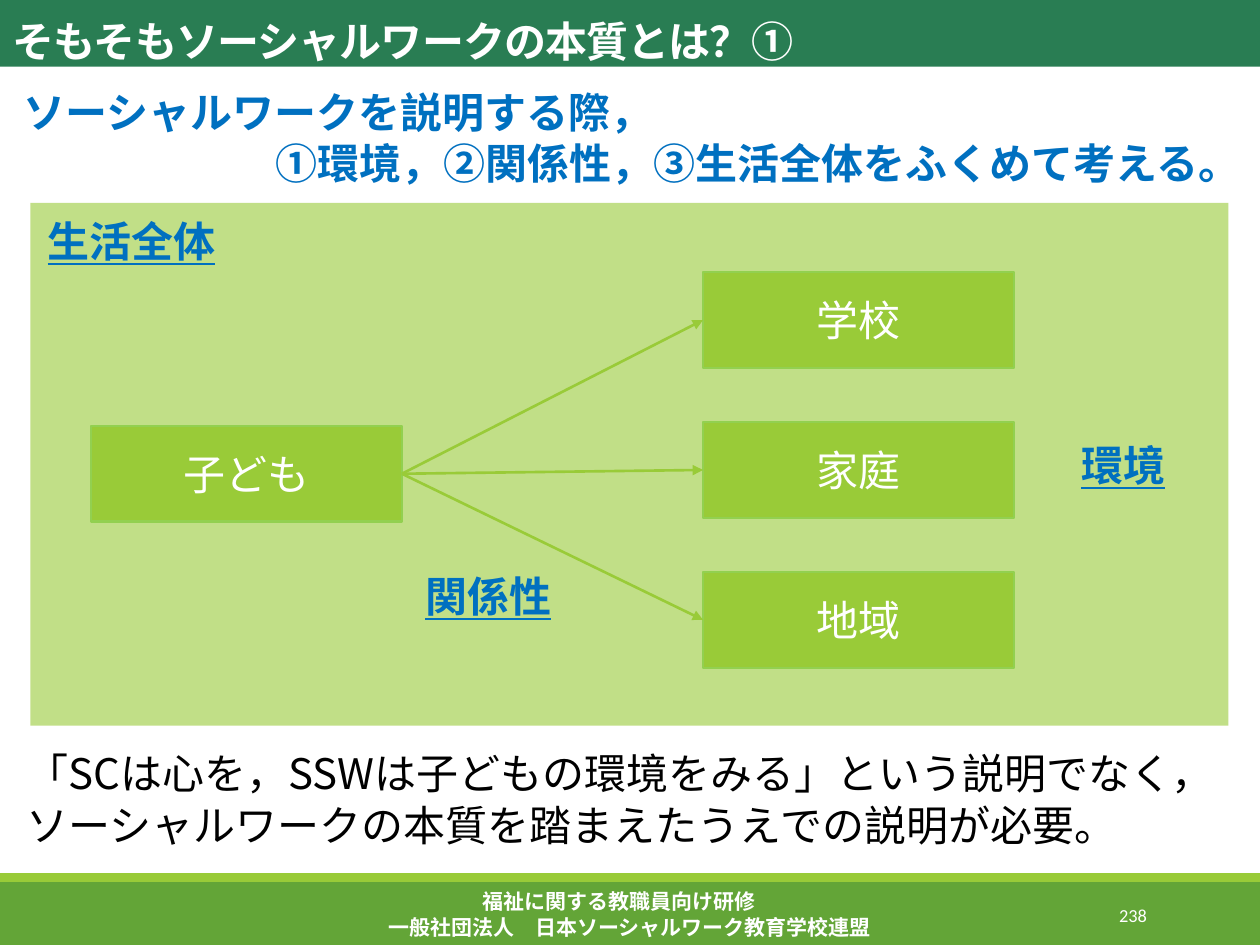
from dataclasses import dataclass

from lxml import etree
from pptx import Presentation
from pptx import util as u
from pptx.dml.color import RGBColor
from pptx.enum import shapes, text
from pptx.oxml import ns


@dataclass(frozen=True)
class Theme:
    font: str = "Noto Sans CJK JP"
    number_font: str = "Calibri"
    white: str = "FFFFFF"
    black: str = "000000"
    blue: str = "0070C0"
    title_fill: str = "297D53"
    footer_fill: str = "63A537"
    lime: str = "99CB38"
    outline: str = "92D050"
    body: float = 24
    footer: float = 12
    number: float = 10.5
    line_ratio: float = 1.22


THEME = Theme()
LEFT, CENTER, RIGHT = text.PP_ALIGN.LEFT, text.PP_ALIGN.CENTER, text.PP_ALIGN.RIGHT
MIDDLE = text.MSO_ANCHOR.MIDDLE


def rgb(color):
    return RGBColor.from_string(color)


def add_span(para, words, color, size=THEME.body, bold=False, underline=False, font=THEME.font):
    span = para.add_run()
    span.text = words
    span.font.name = font
    span.font.size = u.Pt(size)
    span.font.bold = bold
    span.font.underline = underline
    span.font.color.rgb = rgb(color)
    east_asian = etree.SubElement(span.font._element, ns.qn("a:ea"))
    east_asian.set("typeface", font)
    return span


def add_rectangle(page, box, fill, line=None, opacity=None):
    shape = page.shapes.add_shape(shapes.MSO_SHAPE.RECTANGLE, *map(u.Inches, box))
    shape.shadow.inherit = False
    shape.fill.solid()
    shape.fill.fore_color.rgb = rgb(fill)
    if opacity is not None:
        color = shape.fill._xPr.find(".//" + ns.qn("a:srgbClr"))
        etree.SubElement(color, ns.qn("a:alpha")).set("val", str(opacity * 1000))
    if line:
        shape.line.color.rgb = rgb(line)
        shape.line.width = u.Pt(1.25)
    else:
        shape.line.fill.background()
    return shape


def add_text(page, box, lines, color, size=THEME.body, align=LEFT, anchor=None, indent=0, **style):
    """Place one paragraph per line; indent moves every line after the first."""
    frame = page.shapes.add_textbox(*map(u.Inches, box)).text_frame
    frame.word_wrap = True
    if anchor is not None:
        frame.vertical_anchor = anchor
    for index, words in enumerate(lines):
        para = frame.paragraphs[0] if index == 0 else frame.add_paragraph()
        para.alignment = align
        if len(lines) > 1:
            para.line_spacing = u.Pt(size * THEME.line_ratio)
        if index and indent:
            properties = para._p.get_or_add_pPr()
            properties.set("marL", str(u.Inches(indent)))
            properties.set("indent", "0")
        add_span(para, words, color, size, **style)


def add_node(page, box, words):
    node = add_rectangle(page, box, THEME.lime, THEME.outline)
    frame = node.text_frame
    frame.vertical_anchor = MIDDLE
    frame.paragraphs[0].alignment = CENTER
    add_span(frame.paragraphs[0], words, THEME.white)
    return node


def add_arrow(page, source, target):
    """Run an arrow from the right side of source to the left side of target."""
    arrow = page.shapes.add_connector(shapes.MSO_CONNECTOR.STRAIGHT, 0, 0, 0, 0)
    arrow.begin_connect(source, 3)
    arrow.end_connect(target, 1)
    arrow.line.color.rgb = rgb(THEME.lime)
    arrow.line.width = u.Pt(1.5)
    line = arrow.line._get_or_add_ln()
    etree.SubElement(line, ns.qn("a:tailEnd")).set("type", "triangle")
    etree.SubElement(arrow._element.spPr, ns.qn("a:effectLst"))


def build_title(page, box):
    title = page.shapes.title
    title.left, title.top, title.width, title.height = map(u.Inches, box)
    title.fill.solid()
    title.fill.fore_color.rgb = rgb(THEME.title_fill)
    frame = title.text_frame
    frame.auto_size = text.MSO_AUTO_SIZE.NONE
    frame.vertical_anchor = text.MSO_ANCHOR.BOTTOM
    frame.margin_bottom = u.Inches(0.01)
    para = frame.paragraphs[0]
    para.alignment = LEFT
    span = add_span(para, "そもそもソーシャルワークの本質とは？①", THEME.white, bold=True)
    span.font._element.set("spc", "-50")


def build_diagram(page, box):
    left, top, _, _ = box
    add_rectangle(page, box, THEME.lime, opacity=60)

    # Child on the left, the three surroundings on the right
    width, height, pitch = 2.47, 0.76, 1.19
    child = add_node(page, (left + 0.48, top + 1.77, width, height), "子ども")
    for row, words in enumerate(["学校", "家庭", "地域"]):
        target = add_node(page, (left + 5.34, top + 0.55 + row * pitch, width, height), words)
        add_arrow(page, child, target)

    # Underlined captions
    captions = [("生活全体", -0.13, -0.08), ("関係性", 2.7, 2.74), ("環境", 7.74, 1.7)]
    for words, across, down in captions:
        add_text(page, (left + across, top + down, 1.87, height), [words], THEME.blue,
                 align=CENTER, anchor=MIDDLE, bold=True, underline=True)


def build_footer(page, box):
    left, top, width, height = box
    stripe = 0.07
    add_rectangle(page, box, THEME.footer_fill)
    add_rectangle(page, (left, top - stripe, width, stripe), THEME.lime)
    add_text(page, box, ["福祉に関する教職員向け研修　", "一般社団法人　日本ソーシャルワーク教育学校連盟"],
             THEME.white, THEME.footer, CENTER, bold=True)
    add_text(page, (left + 8.12, top + 0.06, 1.08, 0.4), ["238"], THEME.white, THEME.number,
             RIGHT, MIDDLE, font=THEME.number_font)


def main():
    deck = Presentation()
    deck.slide_width, deck.slide_height = u.Inches(10), u.Inches(7.5)
    page = deck.slides.add_slide(deck.slide_layouts[5])

    build_title(page, (0, -0.07, 10, 0.6))
    # Lead statement
    add_text(page, (0.09, 0.63, 10, 0.91),
             ["ソーシャルワークを説明する際，", "①環境，②関係性，③生活全体をふくめて考える。"],
             THEME.blue, indent=2, bold=True)
    build_diagram(page, (0.24, 1.61, 9.51, 4.15))
    # Conclusion
    add_text(page, (0.11, 5.88, 10, 0.91),
             ["「SCは心を，SSWは子どもの環境をみる」という説明でなく，",
              "ソーシャルワークの本質を踏まえたうえでの説明が必要。"], THEME.black)
    build_footer(page, (0, 7, 10, 0.5))
    deck.save("out.pptx")


if __name__ == "__main__":
    main()
